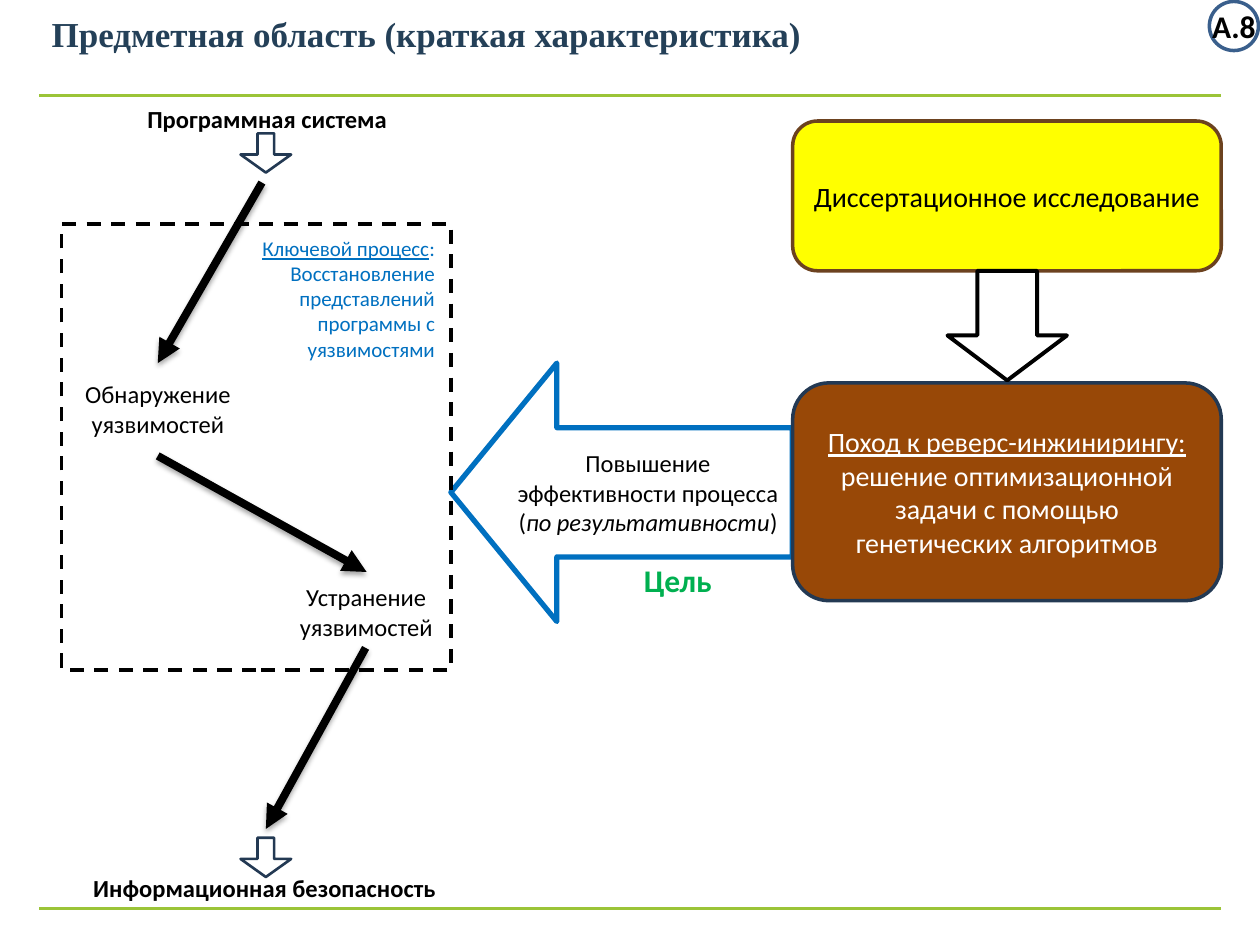
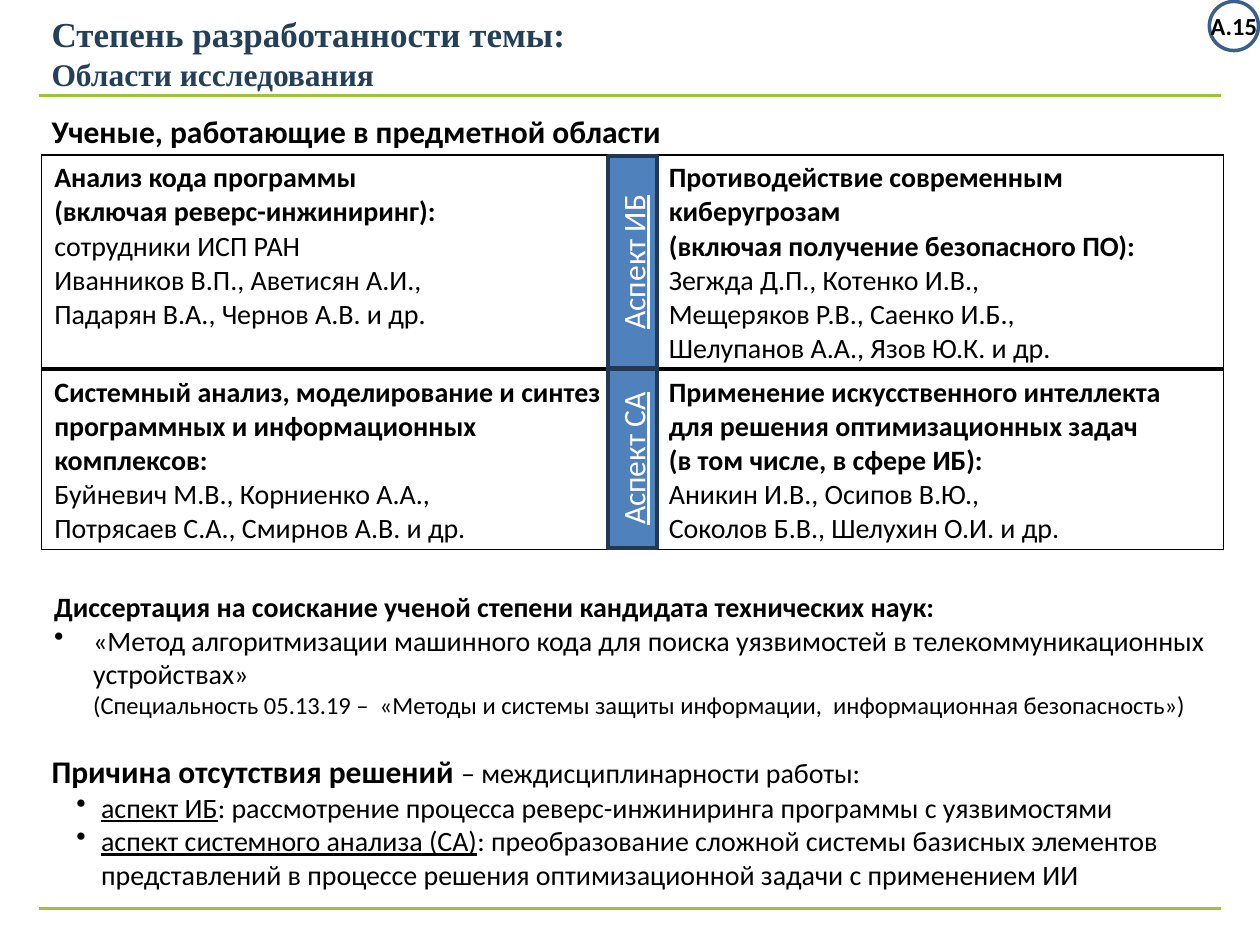
from copy import deepcopy

from lxml import etree
from pptx import Presentation
from pptx.dml.color import RGBColor
from pptx.enum import dml, shapes, text
from pptx.oxml import ns
from pptx.util import Cm, Pt

BLACK = RGBColor(0x00, 0x00, 0x00)
WHITE = RGBColor(0xFF, 0xFF, 0xFF)
TITLE_BLUE = RGBColor(0x24, 0x40, 0x58)
RULE_GREEN = RGBColor(0x9B, 0xC4, 0x38)
BADGE_BLUE = RGBColor(0x3A, 0x5F, 0x8C)
DARK_BLUE = RGBColor(0x23, 0x39, 0x53)
BRIGHT_BLUE = RGBColor(0x00, 0x70, 0xC0)
ASPECT_BLUE = RGBColor(0x4F, 0x81, 0xBD)
BROWN = RGBColor(0x98, 0x48, 0x07)
BROWN_EDGE = RGBColor(0x6C, 0x42, 0x1F)
YELLOW = RGBColor(0xFF, 0xFF, 0x00)
GOAL_GREEN = RGBColor(0x00, 0xB0, 0x50)

FORM = shapes.MSO_SHAPE
LEFT, CENTER, RIGHT = text.PP_ALIGN.LEFT, text.PP_ALIGN.CENTER, text.PP_ALIGN.RIGHT


def draw(slide, form, box, fill=None, line=None, width=1):
    """Add a preset shape, or a text box when form is None; box is in cm."""
    place = [Cm(length) for length in box]
    if form is None:
        label = slide.shapes.add_textbox(*place)
        label.text_frame.word_wrap = True
        label.text_frame.auto_size = text.MSO_AUTO_SIZE.SHAPE_TO_FIT_TEXT
        return label
    shape = slide.shapes.add_shape(form, *place)
    shape.shadow.inherit = False
    if fill is None:
        shape.fill.background()
    else:
        shape.fill.solid()
        shape.fill.fore_color.rgb = fill
    shape.line.color.rgb = line
    shape.line.width = Pt(width)
    return shape


def write(frame, paragraphs, size, color=BLACK, align=LEFT, font="Calibri"):
    """Each run is (words, style letters from "biu", optional own size)."""
    for number, runs in enumerate(paragraphs):
        paragraph = frame.paragraphs[0] if number == 0 else frame.add_paragraph()
        paragraph.alignment = align
        for words, style, *own_size in runs:
            for position, piece in enumerate(words.split("\n")):
                if position:
                    paragraph.add_line_break()
                    paragraph._p[-1].append(deepcopy(run._r.rPr))
                if not piece:
                    continue
                run = paragraph.add_run()
                run.text = piece
                run.font.name = font
                run.font.size = Pt(own_size[0] if own_size else size)
                run.font.color.rgb = color
                run.font.bold = "b" in style
                run.font.italic = "i" in style
                run.font.underline = "u" in style


deck = Presentation()
deck.slide_width, deck.slide_height = Cm(25.4), Cm(19.05)
subject, progress = [deck.slides.add_slide(deck.slide_layouts[6]) for _ in range(2)]

# Shared frame: green rules, title, number badge
headings = [
    (subject, [[("Предметная область (краткая характеристика)", "b")]], 1.12, "А.8", 18),
    (progress, [[("Степень разработанности темы:", "b")],
                [("Области исследования", "b", 18)]], 1.88, "А.15", 14),
]
for slide, title, height, number, number_size in headings:
    for y in (18.31, 1.93):
        rule = slide.shapes.add_connector(
            shapes.MSO_CONNECTOR.STRAIGHT, Cm(0.79), Cm(y), Cm(24.61), Cm(y))
        rule.line.color.rgb = RULE_GREEN
        rule.line.width = Pt(1.5)
        etree.SubElement(rule._element.spPr, ns.qn("a:effectLst"))
    heading = draw(slide, None, (0.79, 0.13, 23.85, height))
    write(heading.text_frame, title, 20, TITLE_BLUE, font="Times New Roman")

    badge = draw(slide, FORM.OVAL, (24.38, 0.03, 0.99, 0.99), WHITE, BADGE_BLUE, 2)
    inside = badge.text_frame
    inside.word_wrap = False
    inside.margin_left = inside.margin_right = inside.margin_top = inside.margin_bottom = 0
    write(inside, [[(number, "b")]], number_size, align=CENTER)

# Slide 1: the chain from software system to information security
stages = [
    ((2.72, 1.98, 5.38, 0.86), ["Программная система"], "b", LEFT),
    ((1.63, 17.48, 7.47, 0.86), ["Информационная безопасность"], "b", LEFT),
    ((1.42, 7.52, 3.53, 1.45), ["Обнаружение", "уязвимостей"], "", CENTER),
    ((5.77, 11.61, 3.23, 1.45), ["Устранение", "уязвимостей"], "", CENTER),
]
for box, lines, style, align in stages:
    stage = draw(subject, None, box)
    stage.text_frame.word_wrap = False
    write(stage.text_frame, [[(line, style)] for line in lines], 14, align=align)

for y in (2.69, 16.89):
    gate = draw(subject, FORM.DOWN_ARROW, (4.85, y, 1.02, 0.79), WHITE, DARK_BLUE, 1.5)
    gate.adjustments[0], gate.adjustments[1] = 0.33, 0.46

steps = [(3.18, 9.19, 7.39, 11.53), (7.37, 13.06, 5.36, 16.71), (5.28, 3.68, 3.18, 7.32)]
for ends in steps:
    step = subject.shapes.add_connector(
        shapes.MSO_CONNECTOR.STRAIGHT, *[Cm(length) for length in ends])
    step.line.color.rgb = BLACK
    step.line.width = Pt(4.5)
    etree.SubElement(step.line._get_or_add_ln(), ns.qn("a:tailEnd"), type="triangle")
    effects = etree.SubElement(step._element.spPr, ns.qn("a:effectLst"))
    shade = etree.SubElement(effects, ns.qn("a:outerShdw"), blurRad=str(Pt(3.1)),
                             dist=str(Pt(1.8)), dir="5400000", rotWithShape="0")
    tint = etree.SubElement(shade, ns.qn("a:srgbClr"), val="000000")
    etree.SubElement(tint, ns.qn("a:alpha"), val="35000")

# Slide 1: goal arrow and key process
goal_arrow = draw(subject, FORM.LEFT_ARROW, (9.09, 7.32, 6.88, 5.21), None, BRIGHT_BLUE, 3)
goal_arrow.adjustments[0], goal_arrow.adjustments[1] = 0.5, 0.41
goal_arrow.text_frame.margin_left = goal_arrow.text_frame.margin_right = Cm(0.13)
write(goal_arrow.text_frame, [[("Повышение эффективности процесса\n(", ""),
                               ("по результативности", "i"), (")", "")]], 14, align=CENTER)

process_area = draw(subject, FORM.RECTANGLE, (1.24, 4.52, 7.85, 8.99), None, BLACK, 2)
process_area.line.dash_style = dml.MSO_LINE.DASH

key_process = draw(subject, None, (3.76, 4.62, 5.26, 2.82))
write(key_process.text_frame, [[
    ("Ключевой процесс", "u"),
    (":\nВосстановление\nпредставлений\nпрограммы с уязвимостями", ""),
]], 12, BRIGHT_BLUE, RIGHT)

goal = draw(subject, None, (12.73, 11.18, 1.9, 1.02))
goal.text_frame.word_wrap = False
write(goal.text_frame, [[("Цель", "b")]], 18, GOAL_GREEN)

# Slide 1: the research and its approach
approach = draw(subject, FORM.ROUNDED_RECTANGLE, (15.98, 7.72, 8.64, 4.39), BROWN, DARK_BLUE, 2)
write(approach.text_frame, [
    [("Поход к реверс-инжинирингу:", "u")],
    [("решение оптимизационной задачи с помощью генетических алгоритмов", "")],
], 16, WHITE, CENTER)
research = draw(subject, FORM.ROUNDED_RECTANGLE, (15.98, 2.44, 8.64, 3.02), YELLOW, BROWN_EDGE, 2)
write(research.text_frame, [[("Диссертационное исследование", "")]], 16, align=CENTER)
link = draw(subject, FORM.DOWN_ARROW, (19.1, 5.46, 2.41, 2.21), None, BLACK, 2.25)
link.adjustments[0], link.adjustments[1] = 0.5, 0.41

# Slide 2: table of scientists, (field, names) in each cell
fields = [
    [("Анализ кода программы\n(включая реверс-инжиниринг):",
      "сотрудники ИСП РАН\nИванников В.П., Аветисян А.И.,\nПадарян В.А., Чернов А.В. и др."),
     ("Противодействие современным киберугрозам\n(включая получение безопасного ПО):",
      "Зегжда Д.П., Котенко И.В.,\nМещеряков Р.В., Саенко И.Б.,\n"
      "Шелупанов А.А., Язов Ю.К. и др.")],
    [("Системный анализ, моделирование и синтез программных и информационных комплексов:",
      "Буйневич М.В., Корниенко А.А.,\nПотрясаев С.А., Смирнов А.В. и др."),
     ("Применение искусственного интеллекта для решения оптимизационных задач\n"
      "(в том числе, в сфере ИБ):",
      "Аникин И.В., Осипов В.Ю.,\nСоколов Б.В., Шелухин О.И. и др.")],
]
scientists = progress.shapes.add_table(2, 2, Cm(0.84), Cm(3.12), Cm(23.82), Cm(7.95)).table
scientists.first_row = scientists.horz_banding = False
for row, height in enumerate((4.32, 3.63)):
    scientists.rows[row].height = Cm(height)
    for column, (field, names) in enumerate(fields[row]):
        cell = scientists.cell(row, column)
        write(cell.text_frame, [[(field, "b")], [(names, "")]], 16)
        if column == 1:
            for paragraph in cell.text_frame.paragraphs:
                paragraph._p.get_or_add_pPr().set("marL", str(Cm(0.48)))
        middle_side = "lnB" if row == 0 else "lnT"
        for side in ("lnL", "lnR", "lnT", "lnB"):
            width = Pt(2.25 if side == middle_side else 1)
            border = etree.SubElement(cell._tc.get_or_add_tcPr(), ns.qn("a:" + side), w=str(width))
            paint = etree.SubElement(border, ns.qn("a:solidFill"))
            etree.SubElement(paint, ns.qn("a:srgbClr"), val=str(BLACK))
        cell.fill.background()

# Slide 2: aspect bands over the middle of the table
for name, y, height in (("Аспект ИБ", 3.15, 4.27), ("Аспект СА", 7.44, 3.61)):
    aspect = draw(progress, FORM.RECTANGLE, (12.26, y, 0.99, height), ASPECT_BLUE, DARK_BLUE, 2)
    aspect.text_frame._txBody.bodyPr.set("vert", "vert270")
    write(aspect.text_frame, [[(name, "u")]], 18, WHITE, CENTER)

# Slide 2: text around the table; the last figure is the bullet (margin, hang) in cm
notes = [
    ((0.79, 2.13, 23.75, 1.02), [[("Ученые, работающие в предметной области", "b", 18)]], None),
    ((0.84, 11.76, 23.85, 2.9), [
        [("Диссертация на соискание ученой степени кандидата технических наук:", "b")],
        [("«Метод алгоритмизации машинного кода для поиска уязвимостей "
          "в телекоммуникационных устройствах»\n", ""),
         ("(Специальность 05.13.19 –  «Методы и системы защиты информации,  "
          "информационная безопасность»)", "", 14)],
    ], (0.79, 0.79)),
    ((0.79, 15.04, 23.85, 3.07), [
        [("Причина отсутствия решений ", "b", 18), ("– междисциплинарности работы:", "")],
        [("аспект ИБ", "u"),
         (": рассмотрение процесса реверс-инжиниринга программы с уязвимостями", "")],
        [("аспект системного анализа (СА)", "u"),
         (": преобразование сложной системы базисных элементов представлений "
          "в процессе решения оптимизационной задачи с применением ИИ", "")],
    ], (1, 0.5)),
]
for box, paragraphs, bullet in notes:
    note = draw(progress, None, box)
    write(note.text_frame, paragraphs, 16)
    for paragraph in note.text_frame.paragraphs[1:]:
        margin, hang = bullet
        properties = paragraph._p.get_or_add_pPr()
        properties.set("marL", str(Cm(margin)))
        properties.set("indent", str(-Cm(hang)))
        etree.SubElement(properties, ns.qn("a:buChar"), char="•")

deck.save("out.pptx")
